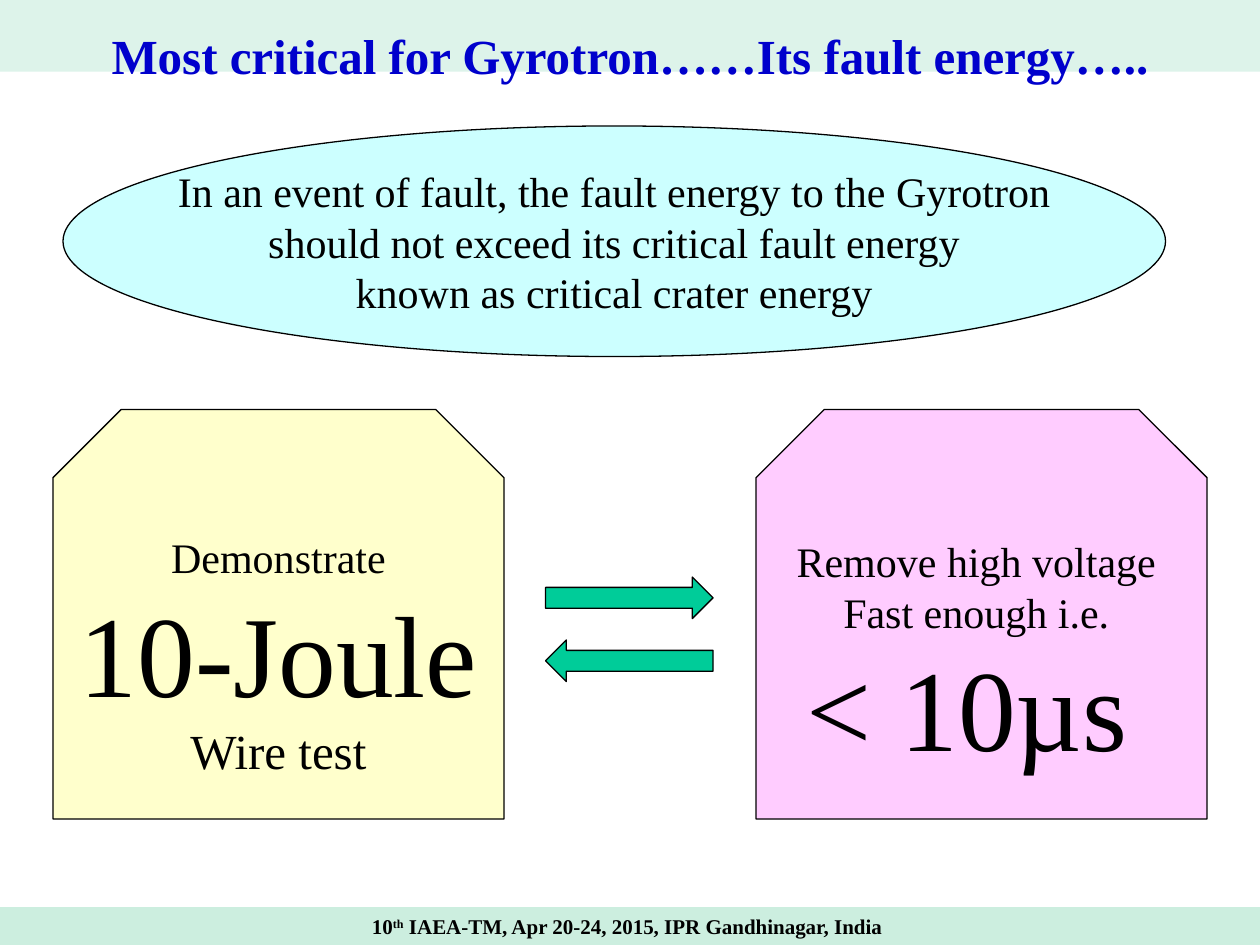
import pptx
import pptx.util
import pptx.dml.color
import pptx.enum.shapes
import pptx.enum.text

Inches, Pt = pptx.util.Inches, pptx.util.Pt
RGB = pptx.dml.color.RGBColor
KIND = pptx.enum.shapes.MSO_SHAPE
ANCHOR = pptx.enum.text.MSO_ANCHOR
CENTER = pptx.enum.text.PP_ALIGN.CENTER

# Content: each line is (text, size)
TITLE = [("Most critical for Gyrotron……Its fault energy…..", 28)]
CLAIM = [
    ("In an event of fault, the fault energy to the Gyrotron", 24),
    ("should not exceed its critical fault energy", 24),
    ("known as critical crater energy", 24),
]
CARDS = [
    (0.42, "yellow", [("Demonstrate", 24), ("10-Joule", 66), ("Wire test", 28)]),
    (6, "pink", [("Remove high voltage ", 24), ("Fast enough i.e. ", 24),
                 ("< 10µs ", 66)]),
]
ARROWS = [KIND.RIGHT_ARROW, KIND.LEFT_ARROW]
FOOTER = [("10", 12)]
TAIL = [("th", True), (" IAEA-TM, Apr 20-24, 2015, IPR Gandhinagar, India ", False)]

COLORS = {
    "black": "000000", "blue": "0000CC", "cyan": "CCFFFF", "pink": "FFCCFF",
    "yellow": "FFFFCC", "green": "00CC99", "mint": "CCEEDF", "pale": "DDF3EA",
}


def tint(name):
    return RGB.from_string(COLORS[name])


def style(run, size, color="black", bold=False):
    run.font.name = "Times New Roman"
    run.font.size = Pt(size)
    run.font.bold = bold
    run.font.color.rgb = tint(color)


def write(shape, lines, color="black", bold=False, wrap=False, top=0.05,
          anchor=ANCHOR.MIDDLE, space=None):
    frame = shape.text_frame
    frame.word_wrap = wrap
    frame.vertical_anchor = anchor
    frame.margin_top = Inches(top)
    for i, (text, size) in enumerate(lines):
        para = frame.add_paragraph() if i else frame.paragraphs[0]
        para.alignment = CENTER
        para.line_spacing = space
        run = para.add_run()
        run.text = text
        style(run, size, color, bold)
    return para


def draw(kind, left, top, width, height, fill, line=True):
    box = [Inches(v) for v in (left, top, width, height)]
    shape = slide.shapes.add_shape(kind, *box)
    shape.shadow.inherit = False
    shape.fill.solid()
    shape.fill.fore_color.rgb = tint(fill)
    if line:
        shape.line.color.rgb = tint("black")
        shape.line.width = Pt(0.75)
    else:
        shape.line.fill.background()
    return shape


deck = pptx.Presentation()
deck.slide_width, deck.slide_height = Inches(10), Inches(7.5)
slide = deck.slides.add_slide(deck.slide_layouts[6])

# Claim
write(draw(KIND.OVAL, 0.5, 1, 8.75, 1.83, "cyan"), CLAIM)

# Cards, with a deep top margin that lowers the text
for left, fill, lines in CARDS:
    card = draw(KIND.SNIP_2_SAME_RECTANGLE, left, 3.25, 3.58, 3.25, fill)
    write(card, lines, top=0.43)

# Arrows between the cards
for i, kind in enumerate(ARROWS):
    draw(kind, 4.33, 4.58 + 0.5 * i, 1.33, 0.33, "green")

# Footer band
foot = draw(KIND.RECTANGLE, 0, 7.2, 10, 0.3, "mint", line=False)
para = write(foot, FOOTER, bold=True, wrap=True)
for text, high in TAIL:
    run = para.add_run()
    run.text = text
    style(run, 12, bold=True)
    if high:
        run.font._element.set("baseline", "30000")

# Title band
head = draw(KIND.RECTANGLE, 0, 0, 10, 0.57, "pale", line=False)
write(head, TITLE, color="blue", bold=True, wrap=True, top=0.06,
      anchor=ANCHOR.TOP, space=1.3)

deck.save("out.pptx")
